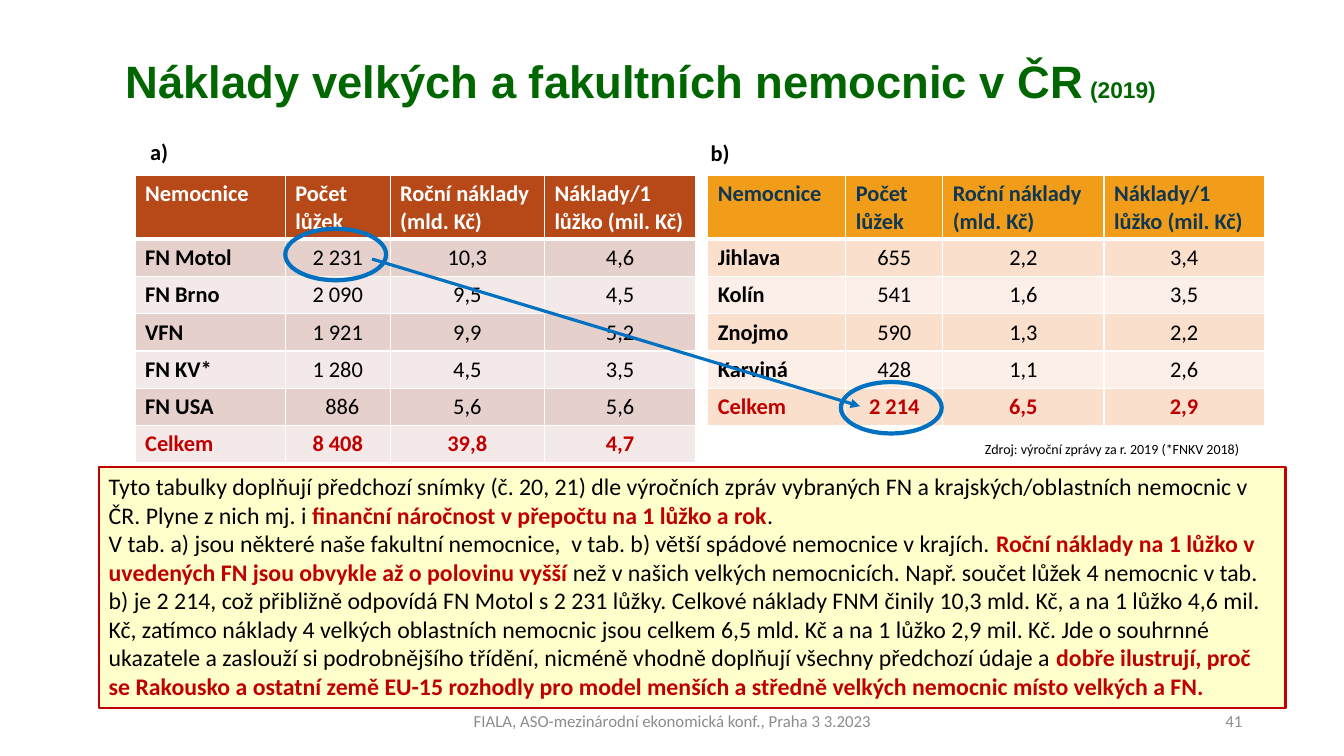
from dataclasses import dataclass

from lxml import etree
from pptx import Presentation
from pptx.dml.color import RGBColor
from pptx.enum import shapes, text
from pptx.oxml import ns
from pptx.util import Inches, Pt

BLACK, WHITE, RED, BLUE, GREEN, GREY = "000000", "FFFFFF", "C00000", "0070C0", "006600", "8C8C8C"
LEFT, MID, RIGHT = text.PP_ALIGN.LEFT, text.PP_ALIGN.CENTER, text.PP_ALIGN.RIGHT
TOP, MIDDLE = text.MSO_ANCHOR.TOP, text.MSO_ANCHOR.MIDDLE
Box = tuple[float, float, float, float]


@dataclass
class Label:
    box: Box
    words: str
    size: float
    color: str = BLACK
    bold: bool = False
    align: int = LEFT
    anchor: int = TOP
    wrap: bool = True


@dataclass
class Grid:
    x: float
    widths: list[float]
    head: str
    ink: str
    bands: tuple[str, str]
    rows: list[str]


HEADS = "Nemocnice|Počet lůžek|Roční náklady (mld. Kč)|Náklady/1 lůžko (mil. Kč)"
GRIDS = [
    Grid(1.34, [1.49, 1.04, 1.53, 1.5], "B74919", WHITE, ("E6D0CC", "F3E9E8"), [
        "FN Motol|2 231|10,3|4,6",
        "FN Brno|2 090|9,5|4,5",
        "VFN|1 921|9,9|5,2",
        "FN KV*|1 280|4,5|3,5",
        "FN USA|886|5,6|5,6",
        "Celkem|8 408|39,8|4,7",
    ]),
    Grid(7.02, [1.37, 0.96, 1.6, 1.59], "F19D19", "0F3754", ("FADFCC", "FCEFE8"), [
        "Jihlava|655|2,2|3,4",
        "Kolín|541|1,6|3,5",
        "Znojmo|590|1,3|2,2",
        "Karviná|428|1,1|2,6",
        "Celkem|2 214|6,5|2,9",
    ]),
]
LABELS = [
    Label((6.95, 1.33, 0.4, 0.37), "b)", 16, bold=True),
    Label((1.39, 1.32, 0.5, 0.37), "a)", 16, bold=True),
    Label((9.67, 4.32, 2.78, 0.27), "Zdroj: výroční zprávy za r. 2019 (*FNKV 2018)", 10, wrap=False),
    Label((4.42, 6.95, 4.5, 0.4), "FIALA, ASO-mezinárodní ekonomická konf., Praha 3 3.2023",
          12, GREY, align=MID, anchor=MIDDLE),
    Label((9.42, 6.95, 3, 0.4), "41", 12, GREY, align=RIGHT, anchor=MIDDLE),
]
NOTES = [
    [
        ("Tyto tabulky doplňují předchozí snímky (č. 20, 21) dle výročních zpráv vybraných FN "
         "a krajských/oblastních nemocnic v ČR. Plyne z nich mj. i ", False),
        ("finanční náročnost v přepočtu na 1 lůžko a rok", True),
        (".", False),
    ],
    [
        ("V tab. a) jsou některé naše fakultní nemocnice,  v tab. b) větší spádové nemocnice "
         "v krajích. ", False),
        ("Roční náklady na 1 lůžko v uvedených FN jsou obvykle až o polovinu vyšší", True),
        (" než v našich velkých nemocnicích. Např. součet lůžek 4 nemocnic v tab. b) je 2 214, "
         "což přibližně odpovídá FN Motol s 2 231 lůžky. Celkové náklady FNM činily 10,3 mld. Kč, "
         "a na 1 lůžko 4,6 mil. Kč, zatímco náklady 4 velkých oblastních nemocnic jsou celkem "
         "6,5 mld. Kč a na 1 lůžko 2,9 mil. Kč. Jde o souhrnné ukazatele a zaslouží si "
         "podrobnějšího třídění, nicméně vhodně doplňují všechny předchozí údaje a ", False),
        ("dobře ilustrují, proč se Rakousko a ostatní země EU-15 rozhodly pro model menších "
         "a středně velkých nemocnic místo velkých a FN.", True),
    ],
]
RINGS: list[Box] = [(2.83, 2.27, 1, 0.51), (8.34, 3.79, 1, 0.51)]


def rgb(code: str) -> RGBColor:
    return RGBColor.from_string(code)


def style(font, size: float, color: str, bold: bool = False, name: str = "Calibri") -> None:
    font.name, font.size, font.bold = name, Pt(size), bold
    font.color.rgb = rgb(color)


def place(box: Box) -> list[int]:
    return [Inches(side) for side in box]


def add_label(slide, label: Label) -> None:
    frame = slide.shapes.add_textbox(*place(label.box)).text_frame
    frame.word_wrap, frame.vertical_anchor = label.wrap, label.anchor
    para = frame.paragraphs[0]
    para.text, para.alignment = label.words, label.align
    style(para.font, label.size, label.color, label.bold)


def add_title(slide) -> None:
    frame = slide.shapes.add_textbox(*place((0.92, 0.4, 10.87, 0.87))).text_frame
    frame.word_wrap, frame.vertical_anchor = True, MIDDLE
    para = frame.paragraphs[0]
    para.alignment, para.line_spacing = MID, 0.9
    for words, size in [("Náklady velkých a fakultních nemocnic v ČR", 32.4), (" (2019)", 16.2)]:
        run = para.add_run()
        run.text = words
        style(run.font, size, GREEN, True, "Arial")


def add_edges(cell, base: float) -> None:
    props = cell._tc.get_or_add_tcPr()
    for side, width in [("L", 1), ("R", 1), ("T", 1), ("B", base)]:
        edge = etree.SubElement(props, ns.qn(f"a:ln{side}"), w=str(Pt(width)))
        fill = etree.SubElement(edge, ns.qn("a:solidFill"))
        etree.SubElement(fill, ns.qn("a:srgbClr"), val=WHITE)


def add_grid(slide, grid: Grid):
    rows = [HEADS, *grid.rows]
    tall = [0.63] + [0.37] * len(grid.rows)
    box = (grid.x, 1.74, sum(grid.widths), sum(tall))
    table = slide.shapes.add_table(len(rows), len(grid.widths), *place(box)).table
    for col, width in zip(table.columns, grid.widths):
        col.width = Inches(width)
    for r, line in enumerate(rows):
        table.rows[r].height = Inches(tall[r])
        first, last = r == 0, r == len(rows) - 1
        ink = grid.ink if first else RED if last else BLACK
        for c, words in enumerate(line.split("|")):
            cell = table.cell(r, c)
            add_edges(cell, 3 if first else 1)
            cell.fill.solid()
            cell.fill.fore_color.rgb = rgb(grid.head if first else grid.bands[(r - 1) % 2])
            para = cell.text_frame.paragraphs[0]
            para.text = words
            para.alignment = LEFT if first or c == 0 else MID
            style(para.font, 16, ink, first or last or c == 0)
    return table


def add_notes(slide) -> None:
    panel = slide.shapes.add_shape(shapes.MSO_SHAPE.RECTANGLE, *place((0.98, 4.63, 11.77, 2.39)))
    panel.shadow.inherit = False
    panel.fill.solid()
    panel.fill.fore_color.rgb = rgb("FFFFCC")
    panel.line.color.rgb, panel.line.width = rgb(RED), Pt(1.5)
    frame = panel.text_frame
    frame.word_wrap, frame.vertical_anchor = True, TOP
    for i, parts in enumerate(NOTES):
        para = frame.add_paragraph() if i else frame.paragraphs[0]
        para.alignment = LEFT
        for words, strong in parts:
            run = para.add_run()
            run.text = words
            style(run.font, 17, RED if strong else BLACK, strong)


def add_ring(slide, box: Box) -> None:
    ring = slide.shapes.add_shape(shapes.MSO_SHAPE.OVAL, *place(box))
    ring.shadow.inherit = False
    ring.fill.background()
    ring.line.color.rgb, ring.line.width = rgb(BLUE), Pt(3)


def add_arrow(slide, ends: Box) -> None:
    arrow = slide.shapes.add_connector(shapes.MSO_CONNECTOR.STRAIGHT, *place(ends))
    arrow.line.color.rgb, arrow.line.width = rgb(BLUE), Pt(2.25)
    etree.SubElement(arrow.line._get_or_add_ln(), ns.qn("a:tailEnd"), type="triangle")
    etree.SubElement(arrow._element.spPr, ns.qn("a:effectLst"))


def main() -> None:
    deck = Presentation()
    deck.slide_width, deck.slide_height = Inches(13.33), Inches(7.5)
    slide = deck.slides.add_slide(deck.slide_layouts[6])
    add_title(slide)
    big, _ = [add_grid(slide, grid) for grid in GRIDS]
    big.cell(5, 1).margin_left = Inches(0.19)
    add_notes(slide)
    for label in LABELS:
        add_label(slide, label)
    for box in RINGS:
        add_ring(slide, box)
    add_arrow(slide, (3.69, 2.57, 8.53, 4.03))
    deck.save("out.pptx")


if __name__ == "__main__":
    main()
